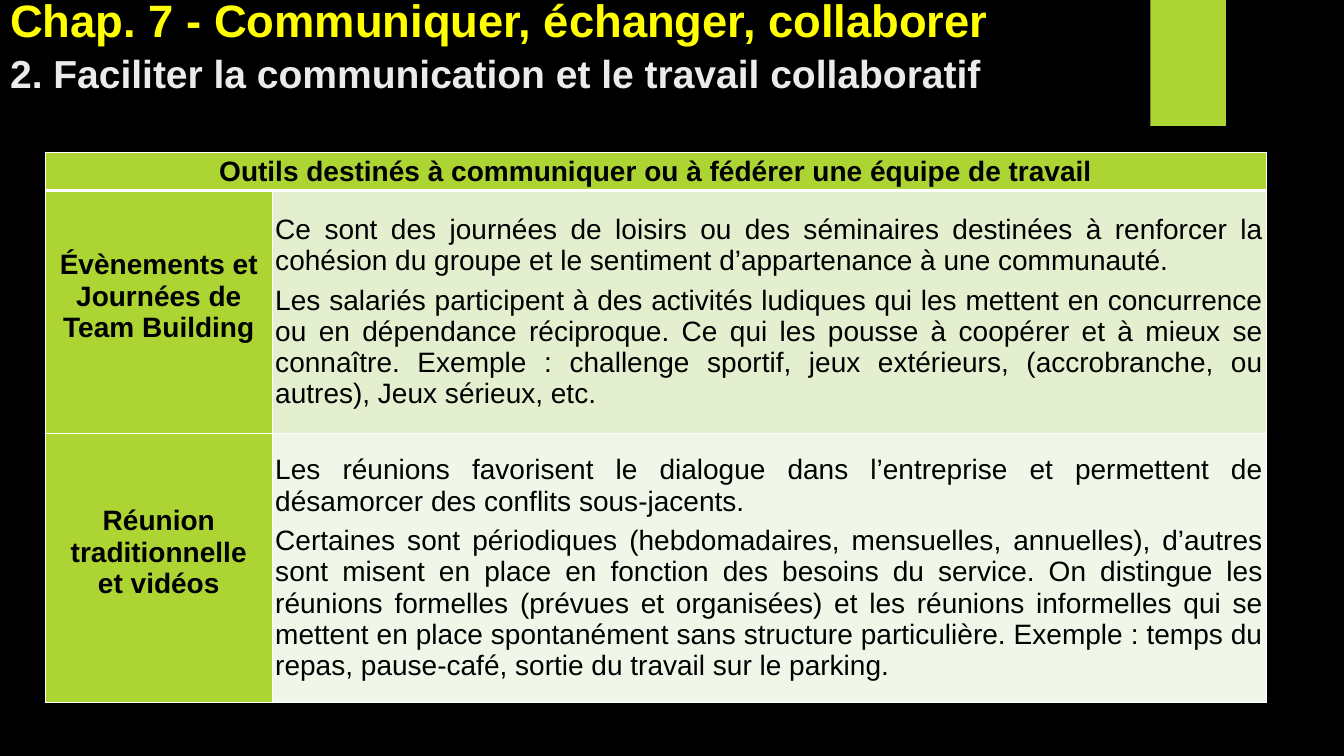
from lxml.etree import SubElement
from pptx import Presentation
from pptx.dml.color import RGBColor
from pptx.enum.shapes import MSO_SHAPE
from pptx.enum.text import MSO_ANCHOR, MSO_AUTO_SIZE, PP_ALIGN
from pptx.oxml.ns import qn
from pptx.util import Inches, Pt

BLACK = RGBColor(0x00, 0x00, 0x00)
WHITE = RGBColor(0xFF, 0xFF, 0xFF)
YELLOW = RGBColor(0xFF, 0xFF, 0x00)
LIGHT_GREY = RGBColor(0xEB, 0xEB, 0xEB)
GREEN = RGBColor(0xAC, 0xD4, 0x33)
PALE_GREEN = RGBColor(0xE3, 0xEF, 0xCE)
PALEST_GREEN = RGBColor(0xF1, 0xF7, 0xE8)

COLUMN_WIDTHS = (2.25, 9.86)
ROW_HEIGHTS = (0.38, 2.41, 2.67)
LABEL_LIFT = 0.31

HEADING = "Outils destinés à communiquer ou à fédérer une équipe de travail"
TOOLS = [
    (
        ["Évènements et Journées de Team Building"],
        [
            "Ce sont des journées de loisirs ou des séminaires destinées à renforcer la "
            "cohésion du groupe et le sentiment d’appartenance à une communauté.",
            "Les salariés participent à des activités ludiques qui les mettent en "
            "concurrence ou en dépendance réciproque. Ce qui les pousse à coopérer et à "
            "mieux se connaître. Exemple : challenge sportif, jeux extérieurs, "
            "(accrobranche, ou autres), Jeux sérieux, etc.",
        ],
        PALE_GREEN,
    ),
    (
        ["Réunion traditionnelle", "et vidéos"],
        [
            "Les réunions favorisent le dialogue dans l’entreprise et permettent de "
            "désamorcer des conflits sous-jacents.",
            "Certaines sont périodiques (hebdomadaires, mensuelles, annuelles), d’autres "
            "sont misent en place en fonction des besoins du service. On distingue les "
            "réunions formelles (prévues et organisées) et les réunions informelles qui "
            "se mettent en place spontanément sans structure particulière. "
            "Exemple : temps du repas, pause-café, sortie du travail sur le parking.",
        ],
        PALEST_GREEN,
    ),
]


def add_text(paragraph, text, size=20, color=BLACK, bold=False):
    run = paragraph.add_run()
    run.text = text
    run.font.name = "Arial"
    run.font.size = Pt(size)
    run.font.bold = bold
    run.font.color.rgb = color


def set_borders(cell, bottom_width=1):
    """Draw white borders; call before the fill, which must follow them in the XML."""
    properties = cell._tc.get_or_add_tcPr()
    for side, width in (("L", 1), ("R", 1), ("T", 1), ("B", bottom_width)):
        line = SubElement(properties, qn(f"a:ln{side}"), w=str(Pt(width)))
        fill = SubElement(line, qn("a:solidFill"))
        SubElement(fill, qn("a:srgbClr"), val=str(WHITE))


def fill_cell(cell, texts, color, alignment=PP_ALIGN.CENTER, bold=True,
              gap=0, bottom=0, border_bottom=1):
    set_borders(cell, border_bottom)
    cell.fill.solid()
    cell.fill.fore_color.rgb = color
    cell.vertical_anchor = MSO_ANCHOR.MIDDLE
    cell.margin_left = cell.margin_right = Inches(0.03)
    cell.margin_top = Inches(0)
    cell.margin_bottom = Inches(bottom)
    for index, text in enumerate(texts):
        if index == 0:
            paragraph = cell.text_frame.paragraphs[0]
        else:
            paragraph = cell.text_frame.add_paragraph()
            paragraph.space_before = Pt(gap)
        paragraph.alignment = alignment
        add_text(paragraph, text, bold=bold)


def add_green_tab(slide):
    tab = slide.shapes.add_shape(
        MSO_SHAPE.RECTANGLE, Inches(11.41), Inches(0), Inches(0.75), Inches(1.25))
    tab.shadow.inherit = False
    tab.fill.solid()
    tab.fill.fore_color.rgb = GREEN
    tab.line.fill.background()


def format_title(slide):
    title = slide.shapes.title
    title.left, title.top = Inches(0), Inches(0)
    title.width, title.height = Inches(11.25), Inches(1.01)
    frame = title.text_frame
    frame.word_wrap = True
    frame.auto_size = MSO_AUTO_SIZE.NONE
    frame.vertical_anchor = MSO_ANCHOR.BOTTOM
    paragraph = frame.paragraphs[0]
    paragraph.alignment = PP_ALIGN.LEFT
    paragraph.line_spacing = Pt(36)
    add_text(paragraph, "Chap. 7 - Communiquer, échanger, collaborer",
             size=32.4, color=YELLOW, bold=True)
    paragraph.add_line_break()
    add_text(paragraph, "2. Faciliter la communication et le travail collaboratif",
             size=27.9, color=LIGHT_GREY, bold=True)


def add_tools_table(slide):
    table = slide.shapes.add_table(
        len(ROW_HEIGHTS), len(COLUMN_WIDTHS), Inches(0.45), Inches(1.51),
        Inches(sum(COLUMN_WIDTHS)), Inches(sum(ROW_HEIGHTS))).table
    for column, width in zip(table.columns, COLUMN_WIDTHS):
        column.width = Inches(width)
    for row, height in zip(table.rows, ROW_HEIGHTS):
        row.height = Inches(height)

    table.cell(0, 0).merge(table.cell(0, 1))
    fill_cell(table.cell(0, 0), [HEADING], GREEN, border_bottom=3)
    for row, (label, description, color) in enumerate(TOOLS, start=1):
        fill_cell(table.cell(row, 0), label, GREEN, bottom=LABEL_LIFT)
        fill_cell(table.cell(row, 1), description, color,
                  alignment=PP_ALIGN.JUSTIFY, bold=False, gap=6)


def main():
    presentation = Presentation()
    presentation.slide_width = Inches(13.33)
    presentation.slide_height = Inches(7.5)
    slide = presentation.slides.add_slide(presentation.slide_layouts[5])
    slide.background.fill.solid()
    slide.background.fill.fore_color.rgb = BLACK
    add_green_tab(slide)
    format_title(slide)
    add_tools_table(slide)
    presentation.save("out.pptx")


if __name__ == "__main__":
    main()
